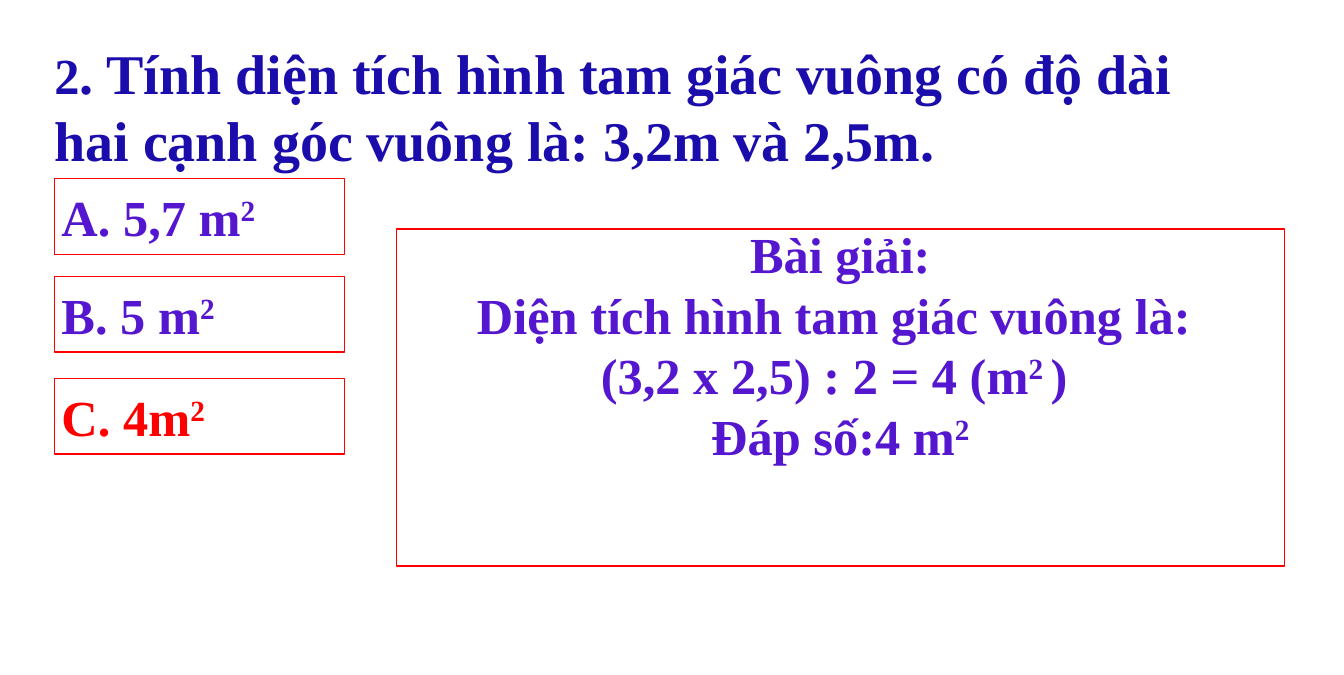
from pptx import Presentation
from pptx.dml.color import RGBColor
from pptx.enum import shapes, text
from pptx.util import Pt

NAVY = RGBColor(0x1A, 0x0D, 0xAB)
PURPLE = RGBColor(0x54, 0x17, 0xCF)
RED = RGBColor(0xFF, 0x00, 0x00)
FONT = "Times New Roman"

OPTIONS = [
    (0, "A. 5,7 m", PURPLE),
    (69.84, "B. 5 m", PURPLE),
    (142.56, "C. 4m", RED),
]
SOLUTION = [
    [("Bài giải:", False)],
    [("Diện tích hình tam giác vuông là: ", False)],
    [("(3,2 x 2,5) : 2 = 4 (m", False), ("2 ", True), (") ", False)],
    [("Đáp số:4 m", False), ("2", True)],
]


def style_paragraph(paragraph, color, alignment):
    paragraph.alignment = alignment
    paragraph.font.name = FONT
    paragraph.font.bold = True
    paragraph.font.color.rgb = color


def add_question(slide, left, top, width, height):
    title = slide.shapes.title
    title.left, title.top = Pt(left), Pt(top)
    title.width, title.height = Pt(width), Pt(height)
    frame = title.text_frame
    frame.auto_size = text.MSO_AUTO_SIZE.NONE
    frame.vertical_anchor = text.MSO_ANCHOR.MIDDLE
    paragraph = frame.paragraphs[0]
    style_paragraph(paragraph, NAVY, text.PP_ALIGN.LEFT)
    question = ". Tính diện tích hình tam giác vuông có độ dài hai cạnh góc vuông là: 3,2m và 2,5m."
    for words, size in (("2", 36), (question, 40)):
        run = paragraph.add_run()
        run.text = words
        run.font.size = Pt(size)


def add_framed_text(slide, left, top, width, height, lines, color, alignment, insets):
    shape = slide.shapes.add_shape(
        shapes.MSO_SHAPE.RECTANGLE, Pt(left), Pt(top), Pt(width), Pt(height))
    shape.shadow.inherit = False
    shape.fill.background()
    shape.line.color.rgb = RED
    shape.line.width = Pt(1)
    frame = shape.text_frame
    frame.word_wrap = True
    frame.vertical_anchor = text.MSO_ANCHOR.MIDDLE
    frame.margin_left = frame.margin_right = Pt(5)
    frame.margin_top, frame.margin_bottom = map(Pt, insets)
    for index, line in enumerate(lines):
        paragraph = frame.add_paragraph() if index else frame.paragraphs[0]
        style_paragraph(paragraph, color, alignment)
        paragraph.font.size = Pt(36)
        for words, raised in line:
            run = paragraph.add_run()
            run.text = words
            if raised:
                run.font._element.set("baseline", "30000")


def add_options(slide, left, top, width, height):
    for offset, words, color in OPTIONS:
        add_framed_text(slide, left, top + offset, width, height,
                        [[(words, False), ("2", True)]], color,
                        text.PP_ALIGN.LEFT, (3, 3))


def add_solution(slide, left, top, width, height):
    add_framed_text(slide, left, top, width, height, SOLUTION, PURPLE,
                    text.PP_ALIGN.CENTER, (0, 76))


def main():
    presentation = Presentation()
    presentation.slide_width = Pt(959.76)
    presentation.slide_height = Pt(481.68)
    slide = presentation.slides.add_slide(presentation.slide_layouts[5])
    add_question(slide, 31.68, 23.04, 840.24, 104.4)
    add_options(slide, 38.88, 127.44, 207.36, 54)
    add_solution(slide, 282.96, 163.44, 634.32, 240.48)
    presentation.save("out.pptx")


if __name__ == "__main__":
    main()
